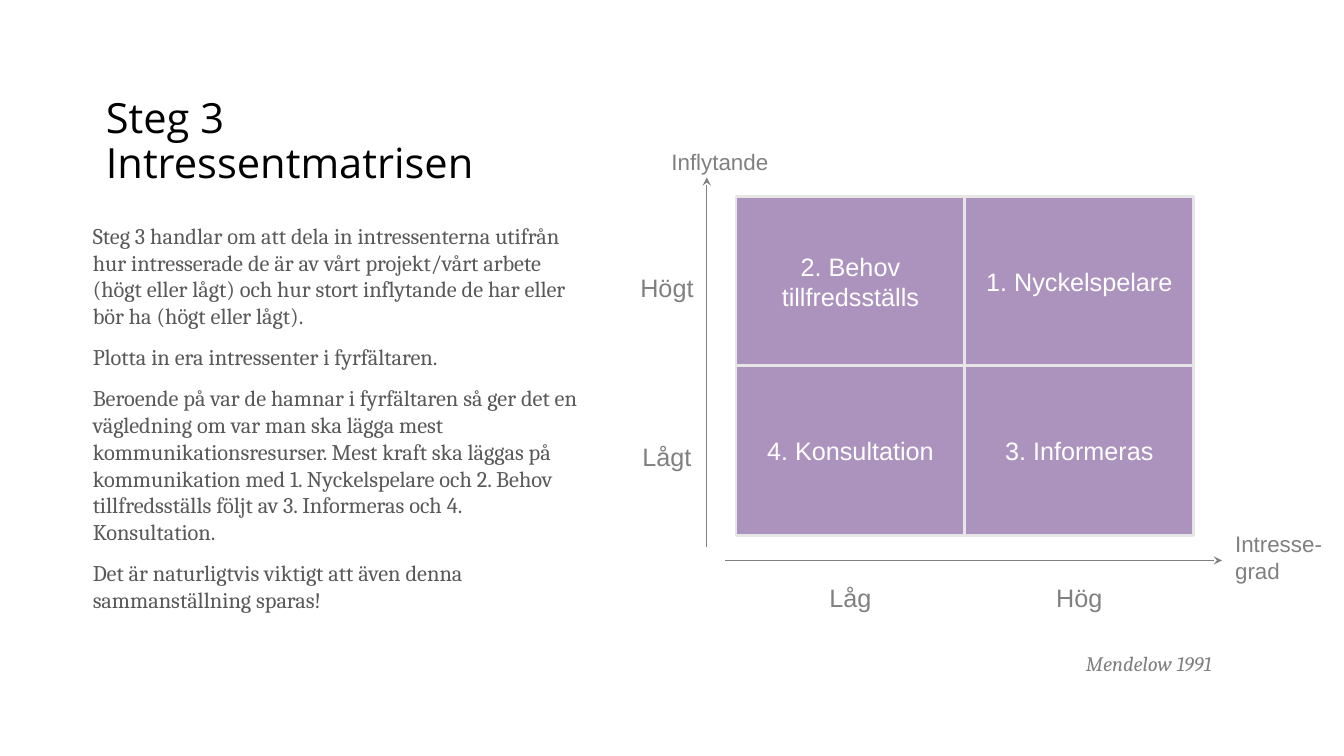
import dataclasses

import pptx
import pptx.dml.color
import pptx.enum.shapes
import pptx.enum.text
import pptx.oxml.ns
import pptx.util
from lxml import etree

Inches = pptx.util.Inches
Pt = pptx.util.Pt
Align = pptx.enum.text.PP_ALIGN
Anchor = pptx.enum.text.MSO_ANCHOR
qn = pptx.oxml.ns.qn

GREY = "808080"
LEFT, TOP, WIDE, HIGH = 7.3, 1.95, 2.27, 1.68  # matrix corner and cell size


@dataclasses.dataclass
class Label:
    text: str
    left: float
    top: float
    width: float
    height: float
    size: float = 18
    align: Align = Align.CENTER
    font: str = "Arial"
    italic: bool = False
    inset: float = 0.07


@dataclasses.dataclass
class Cell:
    text: str
    col: int
    row: int


@dataclasses.dataclass
class Axis:
    x1: float
    y1: float
    x2: float
    y2: float


BODY = [
    "Steg 3 handlar om att dela in intressenterna utifrån hur intresserade de är av "
    "vårt projekt/vårt arbete (högt eller lågt) och hur stort inflytande de har "
    "eller bör ha (högt eller lågt).",
    "Plotta in era intressenter i fyrfältaren.",
    "Beroende på var de hamnar i fyrfältaren så ger det en vägledning om var man ska "
    "lägga mest kommunikationsresurser. Mest kraft ska läggas på kommunikation med "
    "1. Nyckelspelare och 2. Behov tillfredsställs följt av 3. Informeras och "
    "4. Konsultation.",
    "Det är naturligtvis viktigt att även denna sammanställning sparas!",
]
CELLS = [
    Cell("2. Behov tillfredsställs", 0, 0),
    Cell("4. Konsultation", 0, 1),
    Cell("1. Nyckelspelare", 1, 0),
    Cell("3. Informeras", 1, 1),
]
AXES = [Axis(7.01, 5.43, 7.01, 1.76), Axis(7.19, 5.56, 12.12, 5.56)]
LABELS = [
    Label("Intresse-grad", 12.12, 5.19, 1.13, 0.67, 16, Align.LEFT),
    Label("Inflytande", 6.53, 1.4, 1.33, 0.42, 16, Align.LEFT),
    Label("Högt", 6.05, 2.63, 1.13, 0.44),
    Label("Lågt", 6.05, 2.63 + HIGH, 1.13, 0.44),
    Label("Låg", 7.87, 5.71, 1.13, 0.44),
    Label("Hög", 7.87 + WIDE, 5.71, 1.13, 0.44),
    Label("Mendelow 1991", 10.64, 6.33, 2.61, 0.52, 14.7, Align.LEFT,
          "Cambria", True, 0.13),
]


def color(code: str) -> pptx.dml.color.RGBColor:
    return pptx.dml.color.RGBColor.from_string(code)


def set_frame(frame, side: float, edge: float, anchor: Anchor) -> None:
    frame.word_wrap = True
    frame.auto_size = pptx.enum.text.MSO_AUTO_SIZE.NONE
    frame.margin_left = frame.margin_right = Inches(side)
    frame.margin_top = frame.margin_bottom = Inches(edge)
    frame.vertical_anchor = anchor


def style(para, name: str, size: float, code: str, align: Align) -> None:
    para.alignment = align
    para.font.name = name
    para.font.size = Pt(size)
    para.font.color.rgb = color(code)


def add_title(slide) -> None:
    title = slide.shapes.title
    title.left, title.top = Inches(0.92), Inches(0.89)
    title.width, title.height = Inches(4.88), Inches(1.05)
    set_frame(title.text_frame, 0.13, 0.07, Anchor.MIDDLE)
    title.text_frame.text = "Steg 3 Intressentmatrisen"
    para = title.text_frame.paragraphs[0]
    para.line_spacing = 0.9
    style(para, "Open Sans", 29.7, "000000", Align.LEFT)


def add_body(slide) -> None:
    box = slide.shapes.add_textbox(
        Inches(0.92), Inches(2.2), Inches(4.88), Inches(4.22))
    frame = box.text_frame
    set_frame(frame, 0, 0, Anchor.TOP)
    frame.text = "\n".join(BODY)
    for index, para in enumerate(frame.paragraphs):
        para.space_before = Pt(10 if index else 0)
        style(para, "Cambria", 16, "595959", Align.LEFT)


def add_cell(slide, cell: Cell) -> None:
    shape = slide.shapes.add_shape(
        pptx.enum.shapes.MSO_SHAPE.RECTANGLE,
        Inches(LEFT + cell.col * WIDE), Inches(TOP + cell.row * HIGH),
        Inches(WIDE), Inches(HIGH))
    shape.shadow.inherit = False
    shape.fill.solid()
    shape.fill.fore_color.rgb = color("5B297D")
    tint = shape.fill._xPr.find(qn("a:solidFill"))[0]
    etree.SubElement(tint, qn("a:alpha"), val="50000")
    shape.line.color.rgb = color("E6E6E6")
    shape.line.width = Pt(2)
    set_frame(shape.text_frame, 0.13, 0.07, Anchor.MIDDLE)
    shape.text_frame.text = cell.text
    style(shape.text_frame.paragraphs[0], "Arial", 18, "FFFFFF", Align.CENTER)


def add_axis(slide, axis: Axis) -> None:
    line = slide.shapes.add_connector(
        pptx.enum.shapes.MSO_CONNECTOR.STRAIGHT,
        Inches(axis.x1), Inches(axis.y1), Inches(axis.x2), Inches(axis.y2))
    line.line.color.rgb = color(GREY)
    line.line.width = Pt(0.75)
    etree.SubElement(line.line._get_or_add_ln(), qn("a:tailEnd"), type="stealth")
    etree.SubElement(line._element.spPr, qn("a:effectLst"))


def add_label(slide, label: Label) -> None:
    box = slide.shapes.add_textbox(
        Inches(label.left), Inches(label.top),
        Inches(label.width), Inches(label.height))
    set_frame(box.text_frame, 0.13, label.inset, Anchor.TOP)
    box.text_frame.text = label.text
    para = box.text_frame.paragraphs[0]
    style(para, label.font, label.size, GREY, label.align)
    para.font.italic = label.italic


def main() -> None:
    deck = pptx.Presentation()
    deck.slide_width, deck.slide_height = Inches(13.33), Inches(7.5)
    slide = deck.slides.add_slide(deck.slide_layouts.get_by_name("Title Only"))

    # Text on the left
    add_title(slide)
    add_body(slide)

    # Matrix with axes and labels
    for cell in CELLS:
        add_cell(slide, cell)
    for axis in AXES:
        add_axis(slide, axis)
    for label in LABELS:
        add_label(slide, label)

    deck.save("out.pptx")


if __name__ == "__main__":
    main()
